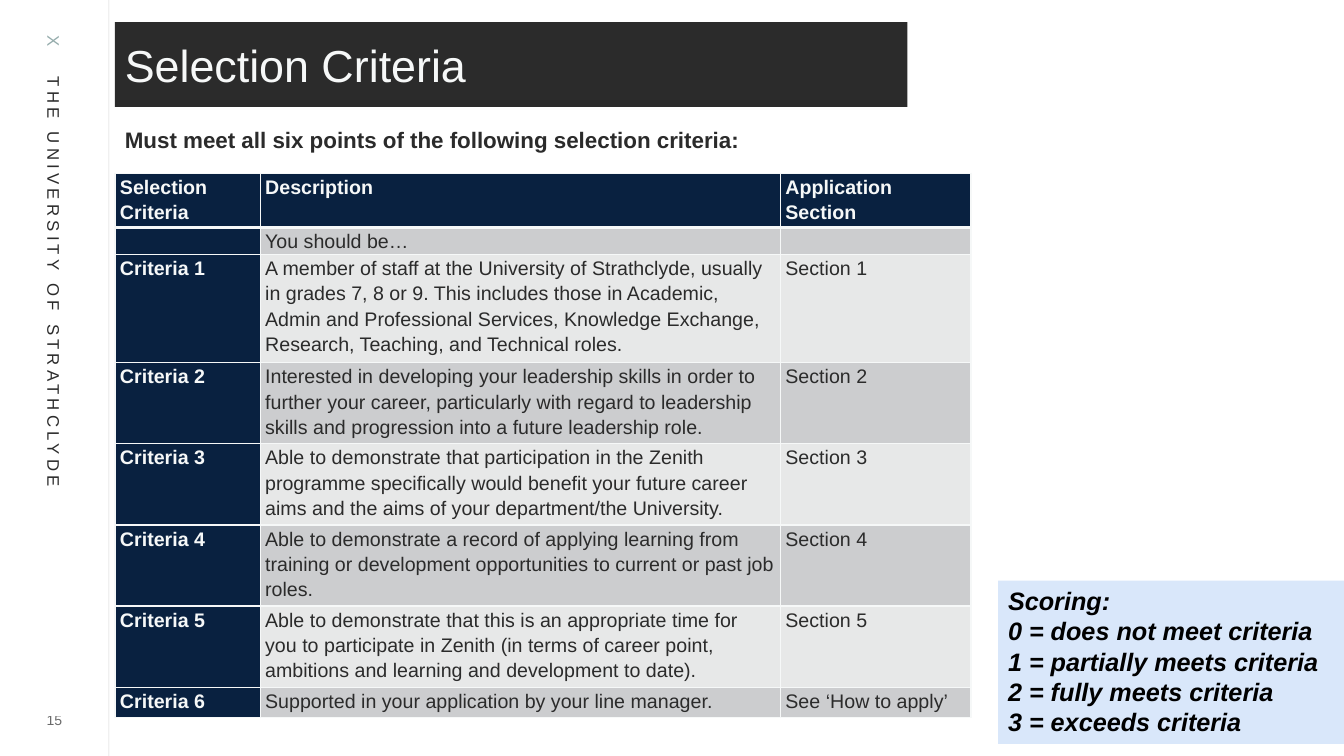
"""Build the selection criteria slide."""
from lxml import etree
from pptx import Presentation
from pptx.dml.color import RGBColor
from pptx.enum.shapes import MSO_CONNECTOR, MSO_SHAPE
from pptx.enum.text import MSO_ANCHOR, PP_ALIGN
from pptx.oxml.ns import qn
from pptx.util import Inches, Pt

TOP, MIDDLE = MSO_ANCHOR.TOP, MSO_ANCHOR.MIDDLE
LEFT, CENTER = PP_ALIGN.LEFT, PP_ALIGN.CENTER
RECTANGLE, STRAIGHT = MSO_SHAPE.RECTANGLE, MSO_CONNECTOR.STRAIGHT

DARK, LIGHT, NAVY, SAGE = "2B2B2B", "F6F8F8", "092140", "95ACAC"
BANDS = ["CCCDCF", "E7E8E8"]
PALE_BLUE, BLACK = "D9E7FA", "000000"

TITLE = "Selection Criteria"
INTRO = "Must meet all six points of the following selection criteria:"
SIDE_MARK, SIDE_LABEL = "X", "\tTHE UNIVERSITY OF STRATHCLYDE"
PAGE_NUMBER = "15"
SCORING = [
    "Scoring:",
    "0 = does not meet criteria",
    "1 = partially meets criteria",
    "2 = fully meets criteria",
    "3 = exceeds criteria",
]
CRITERIA = [
    ("Selection Criteria", "Description", "Application Section"),
    ("", "You should be…", ""),
    ("Criteria 1",
     "A member of staff at the University of Strathclyde, usually in grades 7, 8 or 9. "
     "This includes those in Academic, Admin and Professional Services, Knowledge "
     "Exchange, Research, Teaching, and Technical roles.",
     "Section 1"),
    ("Criteria 2",
     "Interested in developing your leadership skills in order to further your career, "
     "particularly with regard to leadership skills and progression into a future "
     "leadership role.",
     "Section 2"),
    ("Criteria 3",
     "Able to demonstrate that participation in the Zenith programme specifically would "
     "benefit your future career aims and the aims of your department/the University.",
     "Section 3"),
    ("Criteria 4",
     "Able to demonstrate a record of applying learning from training or development "
     "opportunities to current or past job roles.",
     "Section 4"),
    ("Criteria 5",
     "Able to demonstrate that this is an appropriate time for you to participate in "
     "Zenith (in terms of career point, ambitions and learning and development to date).",
     "Section 5"),
    ("Criteria 6", "Supported in your application by your line manager.",
     "See ‘How to apply’"),
]
COLUMN_WIDTHS = [1.44, 5.16, 1.89]
ROW_HEIGHTS = [0.52, 0.25, 1.07, 0.79, 0.79, 0.79, 0.79, 0.3]
CONTENT_LEFT = 1.14


def rgb(value):
    """Turn a hex string into a colour."""
    return RGBColor.from_string(value)


def set_alpha(element, percent):
    """Make the first colour under an element partly transparent."""
    color = next(element.iter(qn("a:srgbClr")))
    etree.SubElement(color, qn("a:alpha")).set("val", str(percent * 1000))


def add_text(paragraph, text, size=14, color=DARK, bold=False, italic=False,
             align=LEFT, line_spacing=None, tracking=None, alpha=None):
    """Add one formatted run to a paragraph."""
    paragraph.alignment = align
    if line_spacing:
        paragraph.line_spacing = line_spacing
    if not text:
        end = etree.SubElement(paragraph._p, qn("a:endParaRPr"))
        end.set("sz", str(size * 100))
        return
    run = paragraph.add_run()
    run.text = text
    font = run.font
    font.name, font.size, font.bold, font.italic = "Arial", Pt(size), bold, italic
    font.color.rgb = rgb(color)
    if tracking:
        run._r.get_or_add_rPr().set("spc", str(tracking * 100))
    if alpha:
        set_alpha(run._r, alpha)


def add_box(slide, left, top, width, height, fill=None, anchor=TOP, wrap=True):
    """Add a filled rectangle or a plain text box and return it."""
    place = [Inches(value) for value in (left, top, width, height)]
    if fill:
        shape = slide.shapes.add_shape(RECTANGLE, *place)
        shape.shadow.inherit = False
        shape.fill.solid()
        shape.fill.fore_color.rgb = rgb(fill)
        shape.line.fill.background()
    else:
        shape = slide.shapes.add_textbox(*place)
    shape.text_frame.word_wrap = wrap
    shape.text_frame.vertical_anchor = anchor
    return shape


def set_borders(cell, **widths):
    """Draw the cell's four borders, one point wide unless stated."""
    properties = cell._tc.get_or_add_tcPr()
    for index, side in enumerate("LRTB"):
        line = etree.Element(qn(f"a:ln{side}"), w=str(Pt(widths.get(side, 1))))
        fill = etree.SubElement(line, qn("a:solidFill"))
        etree.SubElement(fill, qn("a:srgbClr")).set("val", LIGHT)
        properties.insert(index, line)


def add_criteria_table(slide):
    """Add the table with a navy header row and first column."""
    table = slide.shapes.add_table(
        len(CRITERIA), len(COLUMN_WIDTHS), Inches(CONTENT_LEFT), Inches(1.72),
        Inches(sum(COLUMN_WIDTHS)), Inches(sum(ROW_HEIGHTS))).table
    for column, width in zip(table.columns, COLUMN_WIDTHS):
        column.width = Inches(width)
    for row, height in zip(table.rows, ROW_HEIGHTS):
        row.height = Inches(height)
    for row_index, texts in enumerate(CRITERIA):
        for column_index, text in enumerate(texts):
            cell = table.cell(row_index, column_index)
            heading = row_index == 0 or column_index == 0
            cell.margin_left = cell.margin_right = Inches(0.05)
            cell.margin_top = cell.margin_bottom = 0
            cell.fill.solid()
            cell.fill.fore_color.rgb = rgb(NAVY if heading else BANDS[(row_index - 1) % 2])
            set_borders(cell, B=3 if row_index == 0 else 1, T=3 if row_index == 1 else 1)
            add_text(cell.text_frame.paragraphs[0], text, bold=heading,
                     color=LIGHT if heading else DARK, line_spacing=1.15)


def add_side_strip(slide):
    """Add the vertical rule, the turned label and the page number."""
    rule = slide.shapes.add_connector(
        STRAIGHT, Inches(1.08), 0, Inches(1.08), Inches(7.5))
    rule.line.color.rgb = rgb(DARK)
    rule.line.width = Pt(0.5)
    properties = rule._element.spPr
    set_alpha(properties, 20)
    etree.SubElement(properties, qn("a:effectLst"))

    label = add_box(slide, -2.3, 2.94, 5.67, 0.3)
    label.rotation = 90
    paragraph = label.text_frame.paragraphs[0]
    tabs = etree.SubElement(paragraph._p.get_or_add_pPr(), qn("a:tabLst"))
    etree.SubElement(tabs, qn("a:tab"), pos=str(Inches(0.41)), algn="l")
    add_text(paragraph, SIDE_MARK, size=12, color=SAGE, tracking=3)
    add_text(paragraph, SIDE_LABEL, size=12, tracking=3)

    number = add_box(slide, 0.26, 7.02, 0.56, 0.25, anchor=MIDDLE)
    frame = number.text_frame
    frame.margin_left = frame.margin_right = frame.margin_top = frame.margin_bottom = 0
    add_text(frame.paragraphs[0], PAGE_NUMBER, size=10, align=CENTER, alpha=70)


def main():
    """Build and save the slide."""
    presentation = Presentation()
    presentation.slide_width, presentation.slide_height = Inches(13.33), Inches(7.5)
    slide = presentation.slides.add_slide(presentation.slide_layouts[6])

    add_side_strip(slide)
    title = add_box(slide, CONTENT_LEFT, 0.22, 7.86, 0.84, fill=DARK, anchor=MIDDLE)
    add_text(title.text_frame.paragraphs[0], TITLE, size=32, color=LIGHT)

    scoring = add_box(slide, 9.9, 5.76, 3.43, 1.62, fill=PALE_BLUE)
    for index, text in enumerate(SCORING):
        frame = scoring.text_frame
        paragraph = frame.add_paragraph() if index else frame.paragraphs[0]
        add_text(paragraph, text, size=18, color=BLACK, bold=True, italic=True)

    add_criteria_table(slide)
    intro = add_box(slide, CONTENT_LEFT, 1.2, 6.38, 0.37, anchor=MIDDLE, wrap=False)
    add_text(intro.text_frame.paragraphs[0], INTRO, size=16, bold=True)
    presentation.save("out.pptx")


if __name__ == "__main__":
    main()
